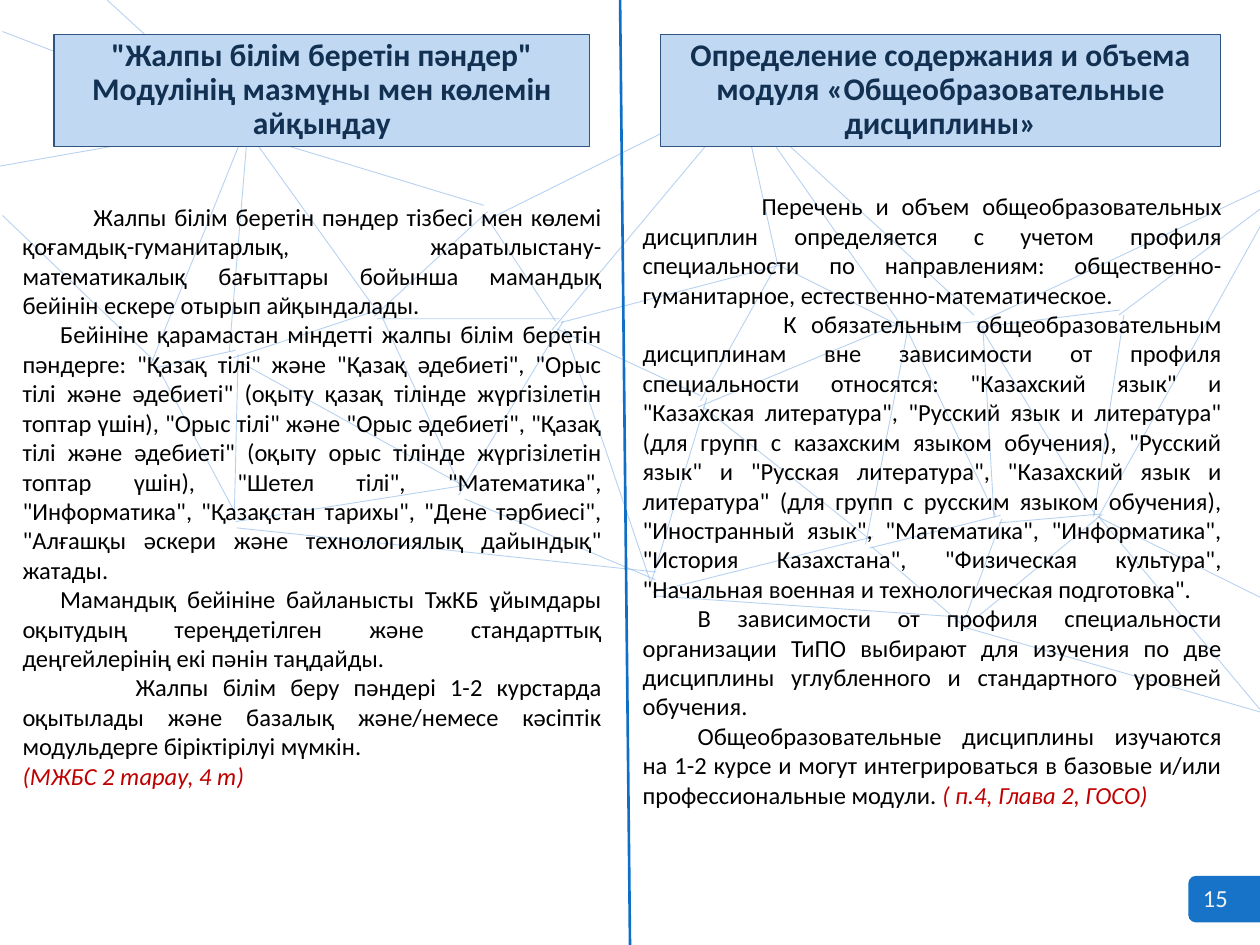
from lxml.etree import SubElement
from pptx import Presentation
from pptx.dml.color import RGBColor
from pptx.enum.shapes import MSO_CONNECTOR, MSO_SHAPE
from pptx.enum.text import MSO_ANCHOR, MSO_AUTO_SIZE, PP_ALIGN
from pptx.oxml.ns import qn
from pptx.util import Cm, Pt

BLUE, NAVY, RED, BLACK = "0F6FC6", "113052", "C00000", "000000"
CM_PER_INCH = 2.54

MESH_INCHES = [
    (0.84, -0.01, 1.92, 0.98), (0.02, 0.25, 1.92, 0.98), (-0.01, 1.32, 1.92, 0.98),
    (1.19, 2.91, 1.97, 0.97), (0.02, 1.71, 1.22, 2.86), (1.97, 0.99, 1.82, 2.79),
    (1.23, 2.92, 1.87, 2.78), (1.95, 1.02, 2.97, 2.44), (1.85, 2.84, 3.03, 2.45),
    (1.93, 1.05, 3.84, 1.63), (2.97, 2.51, 3.87, 1.68), (1.89, 2.81, 1.86, 4.08),
    (1.26, 2.93, 1.86, 4.06), (3.67, 3.85, 1.88, 2.86), (3.66, 3.88, 3.03, 2.51),
    (3.7, 3.85, 1.87, 4.14), (4.41, 2.55, 3.86, 1.72), (2.99, 2.53, 4.44, 2.53),
    (3.64, 3.93, 4.47, 2.55), (5.16, 4.61, 4.48, 2.61), (5.2, 4.6, 3.69, 3.96),
    (5.21, 4.54, 1.88, 4.19), (5.16, 4.65, 5.61, 3.16), (5.56, 3.14, 4.42, 2.61),
    (5.93, 0.72, 3.82, 1.77), (5.95, 0.74, 4.38, 2.62), (6.17, 2.09, 5.56, 3.18),
    (5.93, 0.84, 7.13, 2.55), (5.54, 3.23, 7.2, 2.54), (5.93, 0.85, 7.73, 2.5),
    (6.87, 4.32, 7.21, 2.59), (6.89, 4.27, 5.58, 3.23), (6.93, 4.26, 5.18, 4.7),
    (7.77, 2.55, 7.17, 2.61), (7.9, 4.09, 7.2, 2.62), (7.8, 2.59, 7.89, 4.11),
    (7.94, 4.09, 6.9, 4.35), (7.66, 4.9, 5.2, 4.73), (7.64, 4.96, 6.92, 4.34),
    (7.63, 4.99, 7.95, 4.12), (7.75, 2.57, 10, 1.51), (8.88, 2.5, 10, 1.66),
    (8.72, 4.1, 10, 1.8), (8.89, 2.46, 7.75, 2.6), (8.92, 2.5, 8.68, 4.1),
    (7.79, 2.61, 8.69, 4.08), (7.93, 4.15, 8.73, 4.08), (7.62, 5.01, 8.75, 4.08),
    (8.72, 4.1, 10, 5.63), (8.71, 4.1, 10, 4.74), (7.66, 4.98, 10, 5.65),
    (5.88, 0.78, 6.17, 2.09), (6.17, 2.1, 7.17, 2.6), (4.45, 2.56, 6.17, 2.11),
]

KAZAKH_HEADING = '"Жалпы білім беретін пәндер" Модулінің мазмұны мен көлемін айқындау'
RUSSIAN_HEADING = "Определение содержания и объема модуля «Общеобразовательные дисциплины»"

KAZAKH_TEXT = [
    (1.43, "Жалпы білім беретін пәндер тізбесі мен көлемі қоғамдық-гуманитарлық, "
           "жаратылыстану-математикалық бағыттары бойынша мамандық бейінін ескере отырып "
           "айқындалады.", ""),
    (0.76, 'Бейініне қарамастан міндетті жалпы білім беретін пәндерге: "Қазақ тілі" және '
           '"Қазақ әдебиеті", "Орыс тілі және әдебиеті" (оқыту қазақ тілінде жүргізілетін '
           'топтар үшін), "Орыс тілі" және "Орыс әдебиеті", "Қазақ тілі және әдебиеті" '
           '(оқыту орыс тілінде жүргізілетін топтар үшін), "Шетел тілі", "Математика", '
           '"Информатика", "Қазақстан тарихы", "Дене тәрбиесі", "Алғашқы әскери және '
           'технологиялық дайындық" жатады.', ""),
    (0.76, "Мамандық бейініне байланысты ТжКБ ұйымдары оқытудың тереңдетілген және "
           "стандарттық деңгейлерінің екі пәнін таңдайды.", ""),
    (2.28, "Жалпы білім беру пәндері 1-2 курстарда оқытылады және базалық және/немесе "
           "кәсіптік модульдерге біріктірілуі мүмкін.", ""),
    (0, "", "(МЖБС 2 тарау, 4 т)"),
]
RUSSIAN_TEXT = [
    (2.4, "Перечень и объем общеобразовательных дисциплин определяется с учетом профиля "
          "специальности по направлениям: общественно-гуманитарное, "
          "естественно-математическое.", ""),
    (2.84, "К обязательным общеобразовательным дисциплинам вне зависимости от профиля "
           'специальности относятся: "Казахский язык" и "Казахская литература", "Русский '
           'язык и литература" (для групп с казахским языком обучения), "Русский язык" и '
           '"Русская литература", "Казахский язык и литература" (для групп с русским языком '
           'обучения), "Иностранный язык", "Математика", "Информатика", "История '
           'Казахстана", "Физическая культура", "Начальная военная и технологическая '
           'подготовка".', ""),
    (1.11, "В зависимости от профиля специальности организации ТиПО выбирают для изучения "
           "по две дисциплины углубленного и стандартного уровней обучения.", ""),
    (1.11, "Общеобразовательные дисциплины изучаются на 1-2 курсе и могут интегрироваться "
           "в базовые и/или профессиональные модули. ", "( п.4, Глава 2, ГОСО)"),
]


def paint(color_format, value):
    """Give a colour format the colour of a hex string."""
    color_format.rgb = RGBColor.from_string(value)


def fill_solid(shape, value):
    """Fill a shape with one plain colour."""
    shape.fill.solid()
    paint(shape.fill.fore_color, value)


def set_alpha(properties, percent):
    """Set the opacity of the first colour found in some shape properties."""
    color = next(properties.iter(qn("a:srgbClr")))
    SubElement(color, qn("a:alpha")).set("val", str(percent * 1000))


def place(shape, left, top, width, height):
    """Move and size a shape in centimetres."""
    shape.left, shape.top = Cm(left), Cm(top)
    shape.width, shape.height = Cm(width), Cm(height)


def add_span(para, text, size, color, bold=False, italic=False):
    """Append one formatted run to a paragraph."""
    span = para.add_run()
    span.text = text
    span.font.name, span.font.size = "Calibri", Pt(size)
    span.font.bold, span.font.italic = bold, italic
    paint(span.font.color, color)


def format_para(para, alignment, spacing, indent=0):
    """Remove the bullet and set alignment, spacing and first-line indent."""
    para.alignment, para.line_spacing = alignment, spacing
    para.space_before = para.space_after = Pt(0)
    properties = para._p.get_or_add_pPr()
    properties.set("marL", "0")
    properties.set("indent", str(Cm(indent)))
    SubElement(properties, qn("a:buNone"))


def prepare_frame(box, anchor):
    """Wrap the text of a box at its true size."""
    frame = box.text_frame
    frame.word_wrap, frame.auto_size = True, MSO_AUTO_SIZE.NONE
    frame.vertical_anchor = anchor
    return frame


def add_line(shapes, start, end, color, width):
    """Draw a straight line between two points in centimetres."""
    line = shapes.add_connector(MSO_CONNECTOR.STRAIGHT, *map(Cm, start + end))
    paint(line.line.color, color)
    line.line.width = Pt(width)
    SubElement(line._element.spPr, qn("a:effectLst"))
    return line


def add_mesh(page):
    """Draw the pale net of lines behind everything else."""
    mesh = page.shapes.add_group_shape()
    for edge in MESH_INCHES:
        x1, y1, x2, y2 = (value * CM_PER_INCH for value in edge)
        line = add_line(mesh.shapes, (x1, y1), (x2, y2), "82B1E5", 0.5)
        set_alpha(line._element.spPr, 56)
    page.shapes._spTree.insert(2, mesh._element)


def fill_heading(box, left, width, text):
    """Turn a placeholder into a framed column heading."""
    place(box, left, 0.69, width, 2.26)
    fill_solid(box, "C1D8F2")
    paint(box.line.color, "305480")
    box.line.width = Pt(0.75)
    para = prepare_frame(box, MSO_ANCHOR.MIDDLE).paragraphs[0]
    format_para(para, PP_ALIGN.CENTER, 0.9)
    add_span(para, text, 18, NAVY, bold=True)


def fill_column(box, left, top, height, paragraphs):
    """Fill a body placeholder with justified paragraphs and their sources."""
    place(box, left, top, 12.19, height)
    frame = prepare_frame(box, MSO_ANCHOR.TOP)
    for number, (indent, text, source) in enumerate(paragraphs):
        para = frame.add_paragraph() if number else frame.paragraphs[0]
        format_para(para, PP_ALIGN.JUSTIFY, 1.0, indent)
        if text:
            add_span(para, text, 14, BLACK)
        if source:
            add_span(para, source, 14, RED, italic=True)


def add_page_number(page, number):
    """Draw the page number on its tab at the right edge."""
    tab = page.shapes.add_shape(
        MSO_SHAPE.ROUND_2_SAME_RECTANGLE, Cm(24.21), Cm(17.4), Cm(0.94), Cm(1.45))
    tab.rotation = 270
    tab.shadow.inherit = False
    fill_solid(tab, BLUE)
    set_alpha(tab._element.spPr, 97)
    tab.line.fill.background()
    box = page.shapes.add_textbox(Cm(23.85), Cm(17.68), Cm(1.3), Cm(0.86))
    para = prepare_frame(box, MSO_ANCHOR.TOP).paragraphs[0]
    para.alignment = PP_ALIGN.CENTER
    add_span(para, number, 14, "F2F2F2")


def main():
    """Build the slide and save it."""
    deck = Presentation()
    deck.slide_width, deck.slide_height = Cm(25.4), Cm(19.05)
    page = deck.slides.add_slide(deck.slide_layouts.get_by_name("Comparison"))
    title, spare, left_body, right_heading, right_body = page.placeholders
    spare._element.getparent().remove(spare._element)
    add_mesh(page)
    fill_heading(title, 1.09, 10.8, KAZAKH_HEADING)
    fill_heading(right_heading, 13.31, 11.3, RUSSIAN_HEADING)
    fill_column(left_body, 0.2, 3.94, 12.4, KAZAKH_TEXT)
    fill_column(right_body, 12.7, 3.73, 12.83, RUSSIAN_TEXT)
    add_line(page.shapes, (12.5, 0), (12.7, 19.05), BLUE, 1.5)
    add_page_number(page, "15")
    deck.save("out.pptx")


if __name__ == "__main__":
    main()
